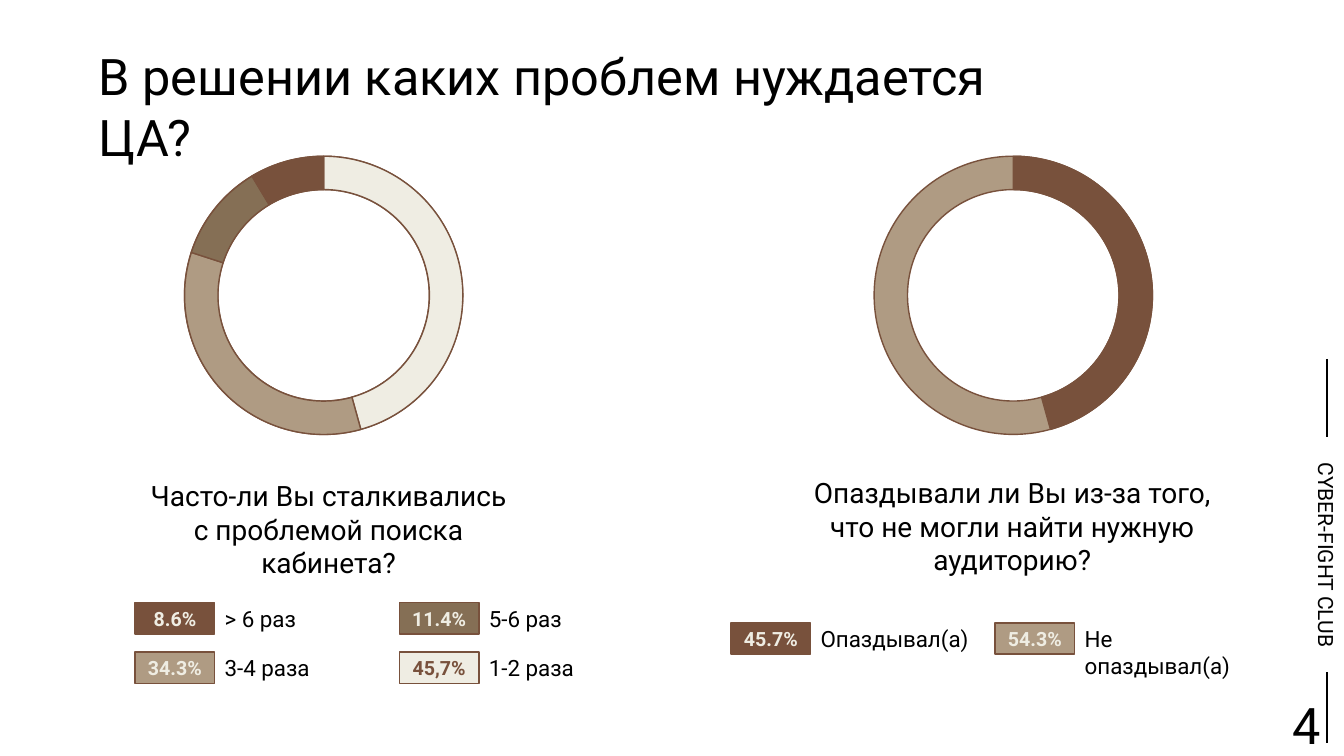
from lxml import etree
from pptx import Presentation
from pptx.dml.color import RGBColor
from pptx.enum import shapes, text
from pptx.oxml import ns
from pptx.util import Inches, Pt

BLACK = RGBColor(0x00, 0x00, 0x00)
BROWN = RGBColor(0x78, 0x51, 0x3C)
OLIVE = RGBColor(0x85, 0x6F, 0x55)
SAND = RGBColor(0xAF, 0x9B, 0x83)
CREAM = RGBColor(0xEF, 0xED, 0xE3)


class SurveySlide:
    """Draws the survey slide's elements in one shared style."""

    font = "Roboto"
    ring_size = 2.76
    ring_width = 0.12
    badge_size = (0.79, 0.31)

    def __init__(self, s):
        self.s = s

    def set_text(self, sp, content, size, color=BLACK, align=text.PP_ALIGN.LEFT,
                 anchor=text.MSO_ANCHOR.TOP, bold=False):
        tf = sp.text_frame
        frame_format = {"word_wrap": True, "auto_size": text.MSO_AUTO_SIZE.NONE,
                        "vertical_anchor": anchor}
        for name, value in frame_format.items():
            setattr(tf, name, value)
        p = tf.paragraphs[0]
        p.alignment = align
        p.line_spacing = 1.0
        r = p.add_run()
        r.text = content
        font_format = {"name": self.font, "size": Pt(size), "bold": bold}
        for name, value in font_format.items():
            setattr(r.font, name, value)
        r.font.color.rgb = color

    def title(self, content, x, y, w, h):
        sp = self.s.shapes.title
        sp.left, sp.top, sp.width, sp.height = map(Inches, (x, y, w, h))
        self.set_text(sp, content, 36)

    def label(self, content, x, y, w, h, size, rotation=0, **style):
        sp = self.s.shapes.add_textbox(*map(Inches, (x, y, w, h)))
        sp.rotation = rotation
        self.set_text(sp, content, size, **style)

    def shape(self, kind, x, y, w, h, fill=None):
        sp = self.s.shapes.add_shape(kind, *map(Inches, (x, y, w, h)))
        sp.shadow.inherit = False
        if fill is None:
            sp.fill.background()
        else:
            sp.fill.solid()
            sp.fill.fore_color.rgb = fill
        sp.line.color.rgb = BROWN
        sp.line.width = Pt(1)
        return sp

    def ring(self, x, y, shares, base=None):
        box = (x, y, self.ring_size, self.ring_size)
        donut = self.shape(shapes.MSO_SHAPE.DONUT, *box, fill=base)
        donut.adjustments[0] = self.ring_width
        end = 270
        for percent, fill in shares:
            sweep = 3.6 * percent
            end += sweep
            arc = self.shape(shapes.MSO_SHAPE.BLOCK_ARC, *box, fill=fill)
            arc.rotation = end % 360
            arc.adjustments[0] = 0.6 * (360 - sweep) * 0 + 216 * (1 - percent / 100)
            arc.adjustments[1] = 0
            arc.adjustments[2] = self.ring_width

    def legend(self, x, y, entries, columns=2, step_x=2.62, step_y=0.49):
        for i, (percent, answer, fill, color) in enumerate(entries):
            row, column = divmod(i, columns)
            left, top = x + column * step_x, y + row * step_y
            badge = self.shape(shapes.MSO_SHAPE.RECTANGLE, left, top, *self.badge_size, fill=fill)
            self.set_text(badge, percent, 14, color, text.PP_ALIGN.CENTER,
                          text.MSO_ANCHOR.MIDDLE, True)
            self.label(answer, left + self.badge_size[0], top - 0.03, 1.9, 0.37, 16)

    def rule(self, x, top, bottom):
        line = self.s.shapes.add_connector(
            shapes.MSO_CONNECTOR.STRAIGHT, *map(Inches, (x, top, x, bottom)))
        line.line.color.rgb = BLACK
        line.line.width = Pt(1.5)
        etree.SubElement(line._element.spPr, ns.qn("a:effectLst"))


def main():
    prs = Presentation()
    prs.slide_width, prs.slide_height = Inches(13.33), Inches(7.5)
    survey = SurveySlide(prs.slides.add_slide(prs.slide_layouts[5]))
    center = text.PP_ALIGN.CENTER

    survey.title("В решении каких проблем нуждается ЦА?", 0.88, 0.4, 9.53, 1.3)

    survey.ring(1.83, 1.55, [(45.7, CREAM), (34.3, SAND), (11.4, OLIVE), (8.6, BROWN)])
    survey.label("Часто-ли Вы сталкивались с проблемой поиска кабинета?",
                 1.33, 4.7, 3.86, 1.11, 20, align=center)
    survey.legend(1.34, 5.98, [
        ("8.6%", "> 6 раз", BROWN, CREAM),
        ("11.4%", "5-6 раз", OLIVE, CREAM),
        ("34.3%", "3-4 раза", SAND, CREAM),
        ("45,7%", "1-2 раза", CREAM, BROWN),
    ])

    survey.ring(8.67, 1.55, [(45.7, BROWN)], base=SAND)
    survey.label("Опаздывали ли Вы из-за того, что не могли найти нужную аудиторию?",
                 7.93, 4.67, 4.22, 1.11, 20, align=center)
    survey.legend(7.25, 6.18, [
        ("45.7%", "Опаздывал(а)", BROWN, CREAM),
        ("54.3%", "Не опаздывал(а)", SAND, CREAM),
    ])

    survey.label("CYBER-FIGHT CLUB", 11.99, 5.33, 2.33, 0.35, 15, rotation=90, align=center)
    survey.rule(13.16, 3.56, 4.34)
    survey.rule(13.16, 6.67, 7.37)
    survey.label("4", 12.72, 6.84, 0.53, 0.71, 36)

    prs.save("out.pptx")


if __name__ == "__main__":
    main()
